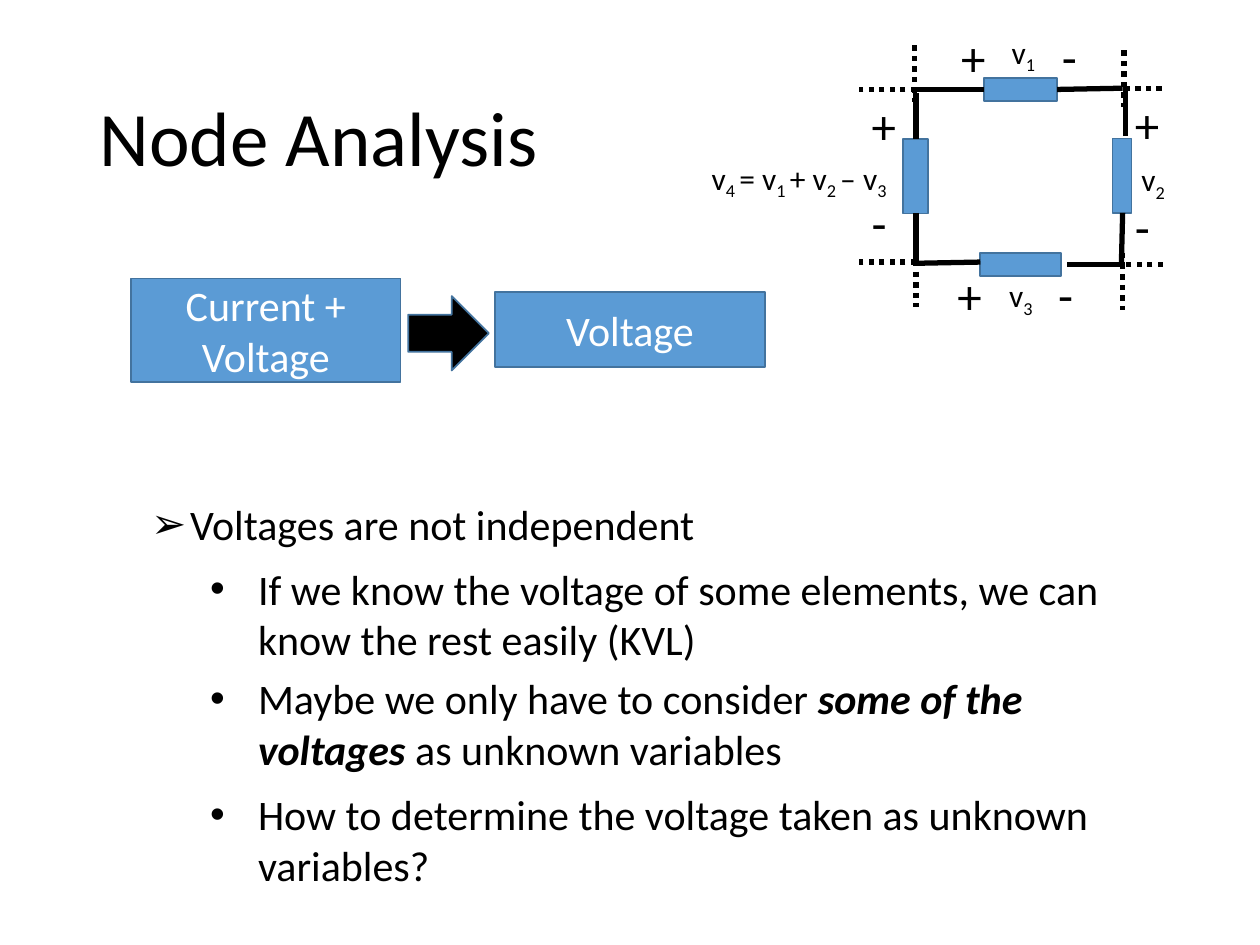
from pptx import Presentation
from pptx.dml.color import RGBColor
from pptx.enum.dml import MSO_LINE
from pptx.enum.shapes import MSO_CONNECTOR, MSO_SHAPE
from pptx.enum.text import MSO_ANCHOR, MSO_AUTO_SIZE, PP_ALIGN
from pptx.oxml.ns import qn
from pptx.util import Inches, Pt
from lxml import etree

RECT, ARROW = MSO_SHAPE.RECTANGLE, MSO_SHAPE.RIGHT_ARROW
STRAIGHT, DOTTED = MSO_CONNECTOR.STRAIGHT, MSO_LINE.ROUND_DOT
MIDDLE, CENTER = MSO_ANCHOR.MIDDLE, PP_ALIGN.CENTER
FIT, FIXED = MSO_AUTO_SIZE.SHAPE_TO_FIT_TEXT, MSO_AUTO_SIZE.NONE
COLUMNS, ROWS = 100, 75
COLORS = {"ink": "000000", "blue": "5B9BD5", "edge": "43739E", "white": "FFFFFF"}


class CircuitPage:
    """Holds the slide style and draws each kind of element on a 100 by 75 grid."""

    def __init__(self, deck):
        self.font = "Calibri"
        self.page = deck.slides.add_slide(deck.slide_layouts[6])
        self.column = deck.slide_width / COLUMNS
        self.row = deck.slide_height / ROWS

    def place(self, x, y):
        return round(x * self.column), round(y * self.row)

    def color(self, name):
        return RGBColor.from_string(COLORS[name])

    def add_spans(self, para, spans, size, color="ink"):
        for text, style in spans:
            span = para.add_run()
            span.text = text
            span.font.name, span.font.size = self.font, Pt(size)
            span.font.color.rgb = self.color(color)
            if style == "strong":
                span.font.bold = span.font.italic = True
            elif style == "sub":
                span.font._element.set("baseline", "-25000")

    def text(self, x, y, width, height, spans, size):
        box = self.page.shapes.add_textbox(*self.place(x, y), *self.place(width, height))
        box.text_frame.word_wrap = True
        box.text_frame.auto_size = FIT
        self.add_spans(box.text_frame.paragraphs[0], spans, size)
        return box.text_frame

    def title(self, x, y, width, height, words):
        frame = self.text(x, y, width, height, [(words, "")], 44)
        frame.auto_size = FIXED
        frame.vertical_anchor = MIDDLE
        frame.paragraphs[0].line_spacing = 0.9

    def bullet(self, x, y, height, mark, indent, spans):
        frame = self.text(x, y, 77.5, height, spans, 24)
        props = frame.paragraphs[0]._p.get_or_add_pPr()
        props.set("marL", str(Inches(indent)))
        props.set("indent", str(-Inches(indent)))
        etree.SubElement(props, qn("a:buFont")).set("typeface", "Arial")
        etree.SubElement(props, qn("a:buChar")).set("char", mark)

    def block(self, x, y, width, height, words="", kind=RECT, fill="blue", turn=0):
        shape = self.page.shapes.add_shape(kind, *self.place(x, y), *self.place(width, height))
        shape.shadow.inherit = False
        shape.rotation = turn
        shape.fill.solid()
        shape.fill.fore_color.rgb = self.color(fill)
        shape.line.color.rgb = self.color("edge")
        shape.line.width = Pt(1)
        if words:
            shape.text_frame.word_wrap = True
            shape.text_frame.vertical_anchor = MIDDLE
            para = shape.text_frame.paragraphs[0]
            para.alignment = CENTER
            self.add_spans(para, [(words, "")], 24, "white")

    def wire(self, start, end, dash=None):
        line = self.page.shapes.add_connector(STRAIGHT, *self.place(*start), *self.place(*end))
        line.line.color.rgb = self.color("ink")
        line.line.width = Pt(3)
        if dash:
            line.line.dash_style = dash
        etree.SubElement(line._element.spPr, qn("a:effectLst"))


def draw_flow(page):
    """Draw the title and the step from two quantities to one."""
    page.title(6.9, 4, 86.2, 14.5, "Node Analysis")
    page.block(10.4, 22.1, 21.4, 8.2, "Current + Voltage")
    page.block(39.3, 23.2, 21.4, 5.9, "Voltage")
    page.block(32.4, 23.5, 6.4, 5.9, kind=ARROW, fill="ink")


def draw_points(page):
    """Add the main statement and its three sub-points."""
    page.bullet(11, 39.1, 5, "➢", 0.31, [("Voltages are not independent", "")])
    points = [
        (44.2, [("If we know the voltage of some elements, we can know the rest easily (KVL)", "")]),
        (52.9, [("Maybe we only have to consider ", ""), ("some of the voltages", "strong"),
                (" as unknown variables", "")]),
        (62.1, [("How to determine the voltage taken as unknown variables?", "")]),
    ]
    for y, spans in points:
        page.bullet(15.7, y, 9.1, "•", 0.38, spans)


def draw_circuit(page):
    """Draw the loop of four elements with its wires, signs and labels."""
    for x, y, width, height, turn in [
        (78.1, 6.2, 5.8, 1.8, 0), (77.8, 20.1, 6.4, 1.8, 0),
        (69.7, 13, 5.9, 2, 90), (86.1, 13.2, 5.9, 1.5, 90),
    ]:
        page.block(x, y, width, height, turn=turn)
    for start, end in [
        ((72.7, 16.9), (72.7, 21)), ((89, 20.9), (89.1, 16.9)),
        ((72.7, 11), (72.7, 7.4)), ((83.9, 7.1), (89.1, 7)),
        ((78.1, 7.1), (72.7, 7.1)), ((72.6, 20.9), (77.8, 20.8)),
        ((89.3, 10.8), (89.3, 6.8)), ((84.7, 21), (89.3, 21)),
    ]:
        page.wire(start, end)
    stub = 4.5
    for x, y in [(68.2, 20.8), (68.2, 7.1), (87.7, 7), (87.8, 21)]:
        page.wire((x + stub, y), (x, y), DOTTED)
    for x, y in [(89.2, 4), (72.6, 3.6), (89.1, 20.1), (72.7, 19.9)]:
        page.wire((x, y), (x, y + stub), DOTTED)
    for sign, x, y in [
        ("+", 75.3, 1.7), ("-", 83.3, 1.6), ("-", 89.1, 15.1), ("+", 89.1, 7),
        ("+", 75, 20.6), ("-", 83, 20.5), ("+", 68.2, 7.1), ("-", 68.2, 14.8),
    ]:
        page.text(x, y, 3.6, 5.7, [(sign, "")], 28)
    for index, x, y in [("1", 79.3, 2.1), ("2", 89.6, 12.2), ("3", 79.1, 21.4)]:
        page.text(x, y, 4.1, 4, [("v", ""), (index, "sub")], 18)
    page.text(55.5, 12.1, 18.2, 4, [
        ("v", ""), ("4 ", "sub"), ("= v", ""), ("1 ", "sub"),
        ("+ v", ""), ("2 ", "sub"), ("– v", ""), ("3", "sub"),
    ], 18)


def main():
    """Build the slide and save it."""
    deck = Presentation()
    deck.slide_width, deck.slide_height = Inches(10), Inches(7.5)
    page = CircuitPage(deck)
    draw_flow(page)
    draw_points(page)
    draw_circuit(page)
    deck.save("out.pptx")


if __name__ == "__main__":
    main()
